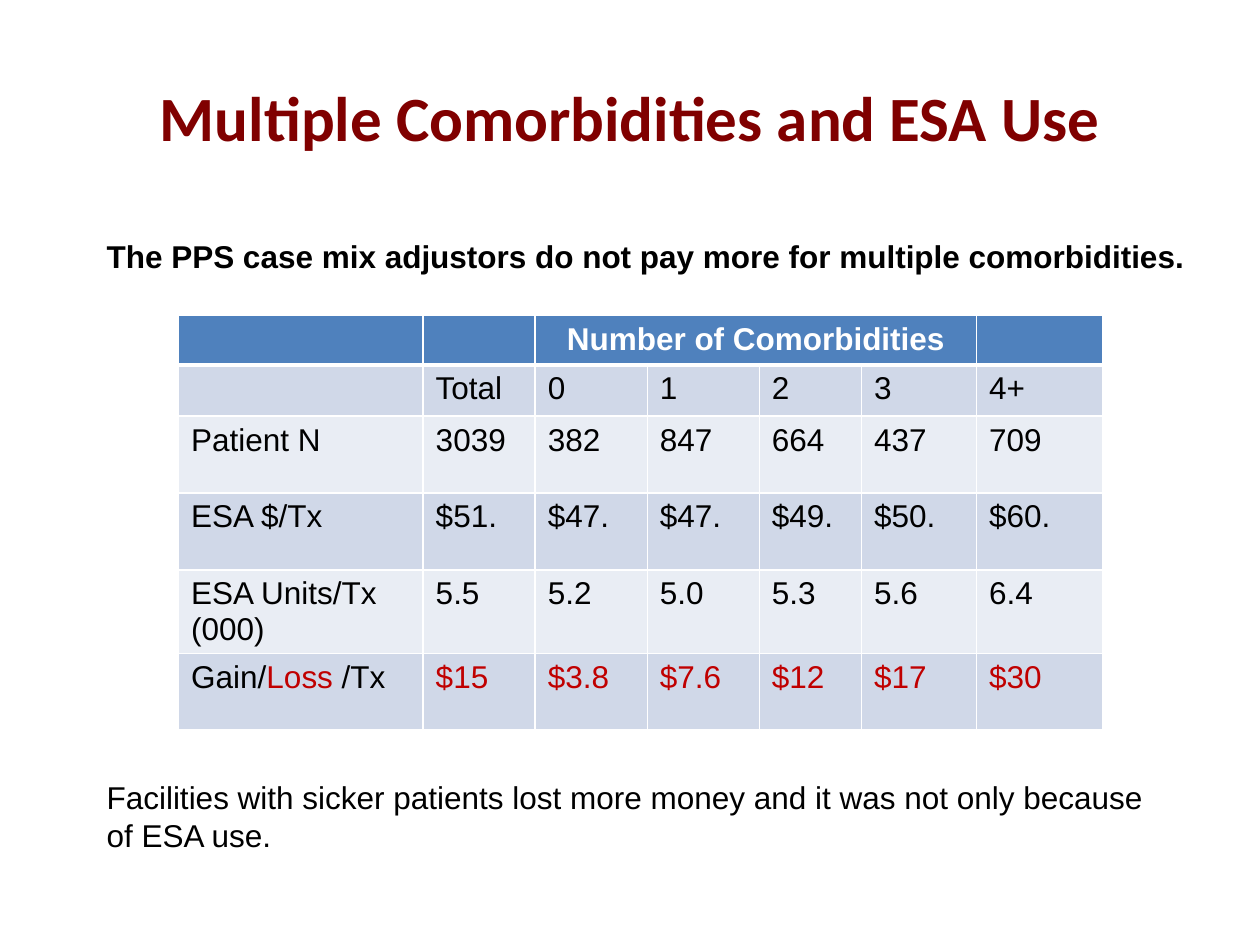
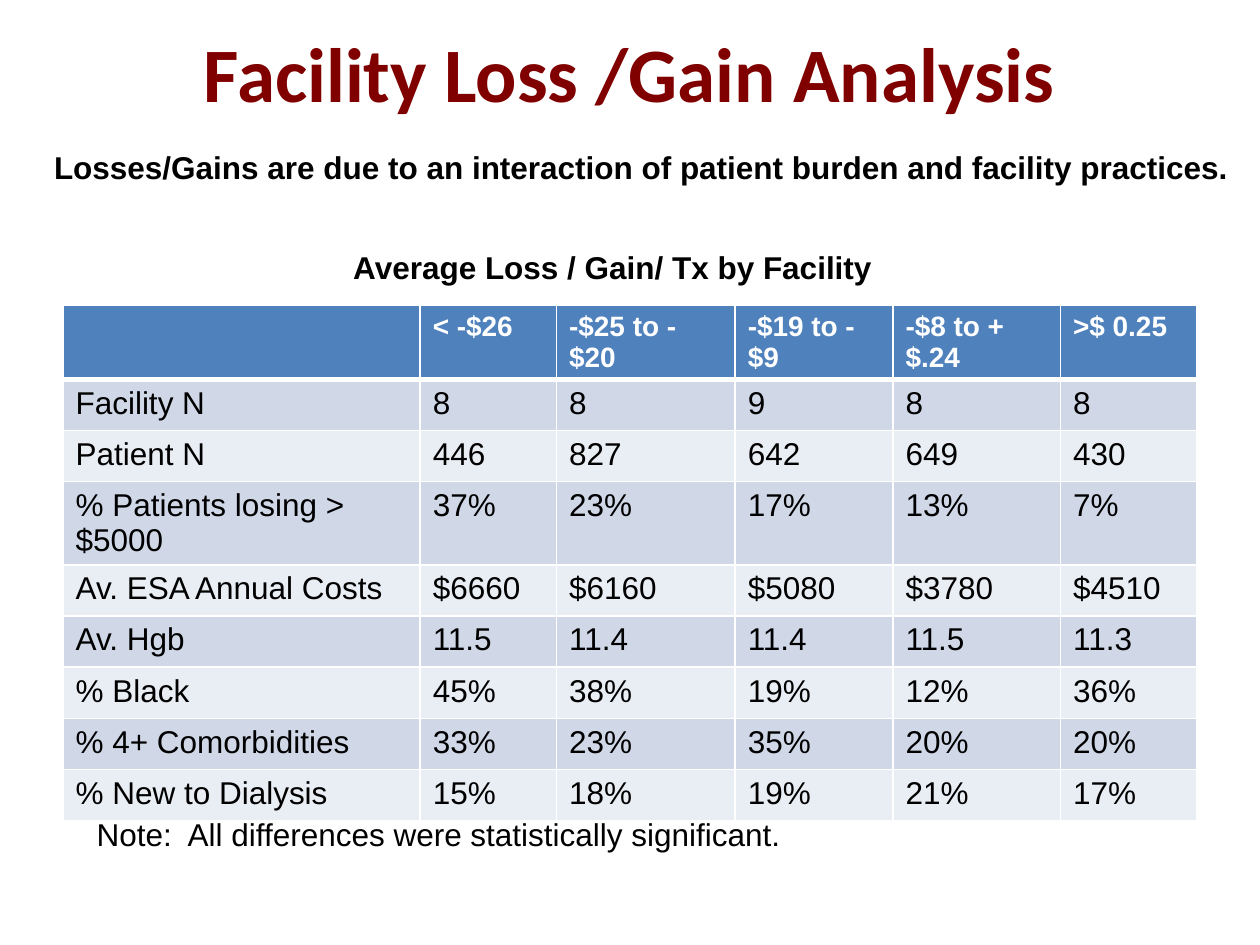
from lxml import etree
from pptx import Presentation
from pptx.dml.color import RGBColor
from pptx.enum.text import MSO_ANCHOR, PP_ALIGN
from pptx.oxml import parse_xml
from pptx.oxml.ns import nsdecls
from pptx.util import Cm, Pt

MAROON, BLACK, WHITE, LOSS_RED = "800000", "000000", "FFFFFF", "C00000"
HEADER_BLUE = "4F81BD"
BANDS = ("D0D8E8", "E9EDF4")
LINE_ROW, TALL_ROW, WRAPPED_ROW = 1.03, 1.55, 1.68


def color(hex_code):
    return RGBColor.from_string(hex_code)


def write(paragraph, content, size=18, hue=BLACK, bold=False,
          align=PP_ALIGN.LEFT, font="Arial"):
    """Fill a paragraph with a string, or with (text, colour) pairs."""
    pieces = [(content, hue)] if isinstance(content, str) else content
    paragraph.alignment = align
    paragraph.font.name = font
    paragraph.font.size = Pt(size)
    paragraph.font.bold = bold
    paragraph.font.color.rgb = color(hue)
    for text, piece_hue in pieces:
        run = paragraph.add_run()
        run.text = text
        if piece_hue != hue:
            run.font.color.rgb = color(piece_hue)


def add_text(slide, box, *lines, anchor=MSO_ANCHOR.TOP, **style):
    frame = slide.shapes.add_textbox(*map(Cm, box)).text_frame
    frame.word_wrap = True
    frame.vertical_anchor = anchor
    for number, line in enumerate(lines):
        paragraph = frame.add_paragraph() if number else frame.paragraphs[0]
        write(paragraph, line, **style)


def add_title(slide, box, title, size):
    add_text(slide, box, title, anchor=MSO_ANCHOR.MIDDLE, size=size,
             hue=MAROON, bold=True, align=PP_ALIGN.CENTER, font="Calibri")


def rule_below(cell):
    """Draw the thick white line that closes the header row."""
    border = parse_xml(f'<a:lnB {nsdecls("a")} w="{Pt(3)}"/>')
    fill = etree.SubElement(border, border.tag.replace("lnB", "solidFill"))
    etree.SubElement(fill, border.tag.replace("lnB", "srgbClr"), val=WHITE)
    cell._tc.get_or_add_tcPr().insert(0, border)


def add_banded_table(slide, left, top, widths, heights, rows, header_size=18):
    table = slide.shapes.add_table(len(rows), len(widths), Cm(left), Cm(top),
                                   Cm(sum(widths)), Cm(sum(heights))).table
    for column, width in zip(table.columns, widths):
        column.width = Cm(width)
    for number, (row, height, values) in enumerate(zip(table.rows, heights, rows)):
        row.height = Cm(height)
        is_header = number == 0
        for cell, value in zip(row.cells, values):
            cell.margin_bottom = 0
            cell.fill.solid()
            cell.fill.fore_color.rgb = color(
                HEADER_BLUE if is_header else BANDS[(number - 1) % 2])
            if is_header:
                rule_below(cell)
            if not value:
                continue
            if is_header:
                write(cell.text_frame.paragraphs[0], value, header_size, WHITE, True)
            else:
                write(cell.text_frame.paragraphs[0], value)
    return table


def build_comorbidities(slide):
    add_title(slide, (1.27, 0.76, 22.86, 3.18), "Multiple Comorbidities and ESA Use", 36)
    add_text(slide, (1.9, 4.65, 22.8, 1.02),
             "The PPS case mix adjustors do not pay more for multiple comorbidities.",
             bold=True)
    losses = [[(amount, LOSS_RED)]
              for amount in ("$15", "$3.8", "$7.6", "$12", "$17", "$30")]
    rows = [
        ("", "", "Number of Comorbidities", "", "", "", ""),
        ("", "Total", "0", "1", "2", "3", "4+"),
        ("Patient N", "3039", "382", "847", "664", "437", "709"),
        ("ESA $/Tx", "$51.", "$47.", "$47.", "$49.", "$50.", "$60."),
        ("ESA Units/Tx (000)", "5.5", "5.2", "5.0", "5.3", "5.6", "6.4"),
        ([("Gain/", BLACK), ("Loss", LOSS_RED), (" /Tx", BLACK)], *losses),
    ]
    heights = (1, LINE_ROW, TALL_ROW, TALL_ROW, WRAPPED_ROW, TALL_ROW)
    table = add_banded_table(slide, 3.6, 6.36,
                             (4.93, 2.26, 2.26, 2.26, 2.06, 2.32, 2.54),
                             heights, rows)
    group_heading = table.cell(0, 2)
    group_heading.merge(table.cell(0, 5))
    group_heading.text_frame.paragraphs[0].alignment = PP_ALIGN.CENTER
    add_text(slide, (1.9, 15.56, 21.8, 1.8),
             "Facilities with sicker patients lost more money and it was not only because",
             "of ESA use.")


def build_loss_gain(slide):
    add_title(slide, (1.27, 0.24, 22.86, 2.4), "Facility Loss /Gain Analysis", 44)
    add_text(slide, (0.84, 2.86, 24.56, 1.8),
             "Losses/Gains are due to an interaction of patient burden and facility practices.",
             bold=True)
    add_text(slide, (6.8, 4.88, 11.1, 1.02), "Average Loss / Gain/ Tx by Facility",
             bold=True, align=PP_ALIGN.CENTER)
    rows = [
        ("", "< -$26", "-$25 to - $20", "-$19 to -$9", "-$8 to +$.24", ">$ 0.25"),
        ("Facility N", "8", "8", "9", "8", "8"),
        ("Patient N", "446", "827", "642", "649", "430"),
        ("% Patients losing > $5000", "37%", "23%", "17%", "13%", "7%"),
        ("Av. ESA Annual Costs", "$6660", "$6160", "$5080", "$3780", "$4510"),
        ("Av. Hgb", "11.5", "11.4", "11.4", "11.5", "11.3"),
        ("% Black", "45%", "38%", "19%", "12%", "36%"),
        ("% 4+ Comorbidities", "33%", "23%", "35%", "20%", "20%"),
        ("% New to Dialysis", "15%", "18%", "19%", "21%", "17%"),
    ]
    heights = [1.5, LINE_ROW, LINE_ROW, WRAPPED_ROW] + [LINE_ROW] * 5
    add_banded_table(slide, 1.27, 6.15, (7.2, 2.75, 3.6, 3.18, 3.38, 2.75),
                     heights, rows, header_size=16)
    add_text(slide, (1.7, 16.3, 14.43, 1.02),
             "Note:  All differences were statistically significant.")


def main():
    deck = Presentation()
    deck.slide_width, deck.slide_height = Cm(25.4), Cm(19.05)
    blank = deck.slide_layouts[6]
    for build in (build_comorbidities, build_loss_gain):
        build(deck.slides.add_slide(blank))
    deck.save("out.pptx")


if __name__ == "__main__":
    main()
